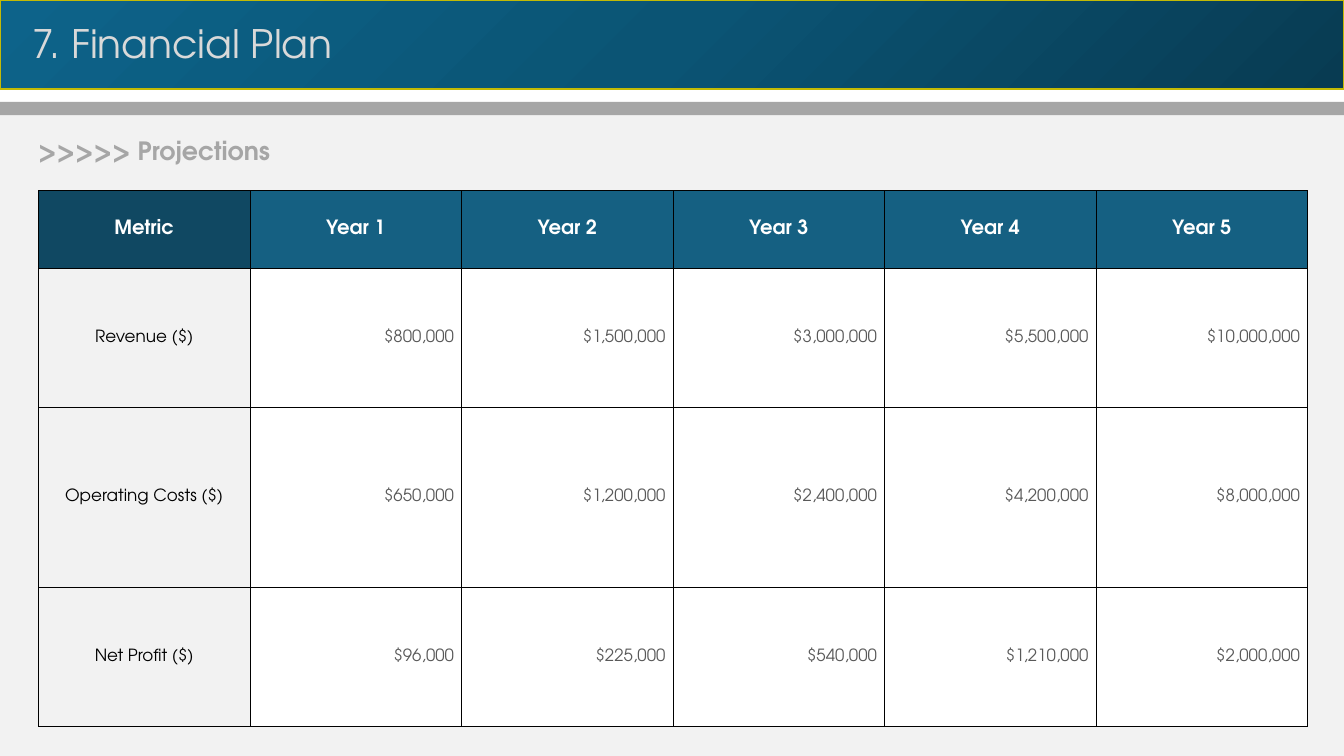
"""Build the financial plan slide with its five-year projections table."""
from copy import deepcopy

from lxml.etree import SubElement
from pptx import Presentation
from pptx.dml.color import RGBColor
from pptx.enum.shapes import MSO_SHAPE as Shape
from pptx.enum.text import MSO_ANCHOR as Anchor, MSO_AUTO_SIZE as AutoSize, PP_ALIGN as Align
from pptx.oxml.ns import qn
from pptx.util import Cm, Pt

TITLE = "7. Financial Plan"
SUBTITLE = ">>>>> Projections"
PROJECTIONS = [
    ("Metric", "Year 1", "Year 2", "Year 3", "Year 4", "Year 5"),
    ("Revenue ($)", "$800,000", "$1,500,000", "$3,000,000", "$5,500,000", "$10,000,000"),
    ("Operating Costs ($)", "$650,000", "$1,200,000", "$2,400,000", "$4,200,000", "$8,000,000"),
    ("Net Profit ($)", "$96,000", "$225,000", "$540,000", "$1,210,000", "$2,000,000"),
]
ROW_HEIGHTS = (1.96, 3.51, 4.52, 3.51)
COLUMN_WIDTH = 5.33
BAND_GRADIENT = ((0, "083B52"), (0.5, "0B5474"), (1, "0D638A"))
FONT = "TeX Gyre Adventor"
WIDTH, HEIGHT = 33.87, 19.05
PANEL_TOP = 2.72


def color(value):
    return RGBColor.from_string(value)


def add_block(page, top, height, fill=None):
    block = page.shapes.add_shape(Shape.RECTANGLE, 0, Cm(top), Cm(WIDTH), Cm(height))
    block.shadow.inherit = False
    block.line.fill.background()
    if fill:
        block.fill.solid()
        block.fill.fore_color.rgb = color(fill)
    return block


def write(frame, text, size, tint, bold=False, align=Align.LEFT):
    para = frame.paragraphs[0]
    para.alignment = align
    para.line_spacing = 1.0
    span = para.add_run()
    span.text = text
    span.font.name = FONT
    span.font.size = Pt(size)
    span.font.bold = bold
    span.font.color.rgb = color(tint)


def place_heading(box, left, top, width, height, text, size, tint, bold=False):
    box.left, box.top, box.width, box.height = map(Cm, (left, top, width, height))
    frame = box.text_frame
    frame.word_wrap = True
    frame.auto_size = AutoSize.SHAPE_TO_FIT_TEXT
    frame.vertical_anchor = Anchor.TOP
    write(frame, text, size, tint, bold)


def add_band(page):
    band = add_block(page, 0, 2.24)
    band.line.color.rgb = color("C3BA05")
    band.line.width = Pt(1.5)
    band.fill.gradient()
    stops = band.element.spPr.find(".//" + qn("a:gsLst"))
    stops.insert(1, deepcopy(stops[0]))
    for stop, (position, tint) in zip(band.fill.gradient_stops, BAND_GRADIENT):
        stop.position = position
        stop.color.rgb = color(tint)
    band.fill.gradient_angle = 135
    return band


def add_borders(cell):
    properties = cell._tc.get_or_add_tcPr()
    for index, side in enumerate(("lnL", "lnR", "lnT", "lnB")):
        line = properties.makeelement(qn(f"a:{side}"), {"w": str(Pt(0.5))})
        fill = SubElement(line, qn("a:solidFill"))
        SubElement(fill, qn("a:srgbClr"), val="000000")
        properties.insert(index, line)


def fill_cell(cell, text, row, column):
    cell.vertical_anchor = Anchor.MIDDLE
    cell.margin_left = cell.margin_right = Cm(0.19)
    if row == 0:
        fill, style = "156082" if column else "104862", (14, "FFFFFF", True, Align.CENTER)
    elif column == 0:
        fill, style = None, (12, "000000", False, Align.CENTER)
    else:
        fill, style = "FFFFFF", (12, "595959", False, Align.RIGHT)
    if fill:
        cell.fill.solid()
        cell.fill.fore_color.rgb = color(fill)
    else:
        cell.fill.background()
    write(cell.text_frame, text, *style)
    add_borders(cell)


def add_projections(page):
    rows, columns = len(PROJECTIONS), len(PROJECTIONS[0])
    table = page.shapes.add_table(
        rows, columns, Cm(0.97), Cm(4.8), Cm(COLUMN_WIDTH * columns), Cm(sum(ROW_HEIGHTS))
    ).table
    table.first_row = table.horz_banding = False
    for column in table.columns:
        column.width = Cm(COLUMN_WIDTH)
    for row, texts in enumerate(PROJECTIONS):
        table.rows[row].height = Cm(ROW_HEIGHTS[row])
        for column, text in enumerate(texts):
            fill_cell(table.cell(row, column), text, row, column)


def main():
    deck = Presentation()
    deck.slide_width, deck.slide_height = Cm(WIDTH), Cm(HEIGHT)
    page = deck.slides.add_slide(deck.slide_layouts[5])
    title = page.shapes.title
    band = add_band(page)
    band.element.addnext(title.element)
    place_heading(title, 0.56, 0.36, 20.52, 1.45, TITLE, 28, "D9D9D9")
    add_block(page, PANEL_TOP, HEIGHT - PANEL_TOP, "F2F2F2")
    subtitle = page.shapes.add_textbox(0, 0, 0, 0)
    place_heading(subtitle, 0.71, 3.28, 17.65, 1.02, SUBTITLE, 18, "A6A6A6", True)
    add_block(page, 2.57, 0.33, "A6A6A6")
    add_projections(page)
    deck.save("out.pptx")


if __name__ == "__main__":
    main()
